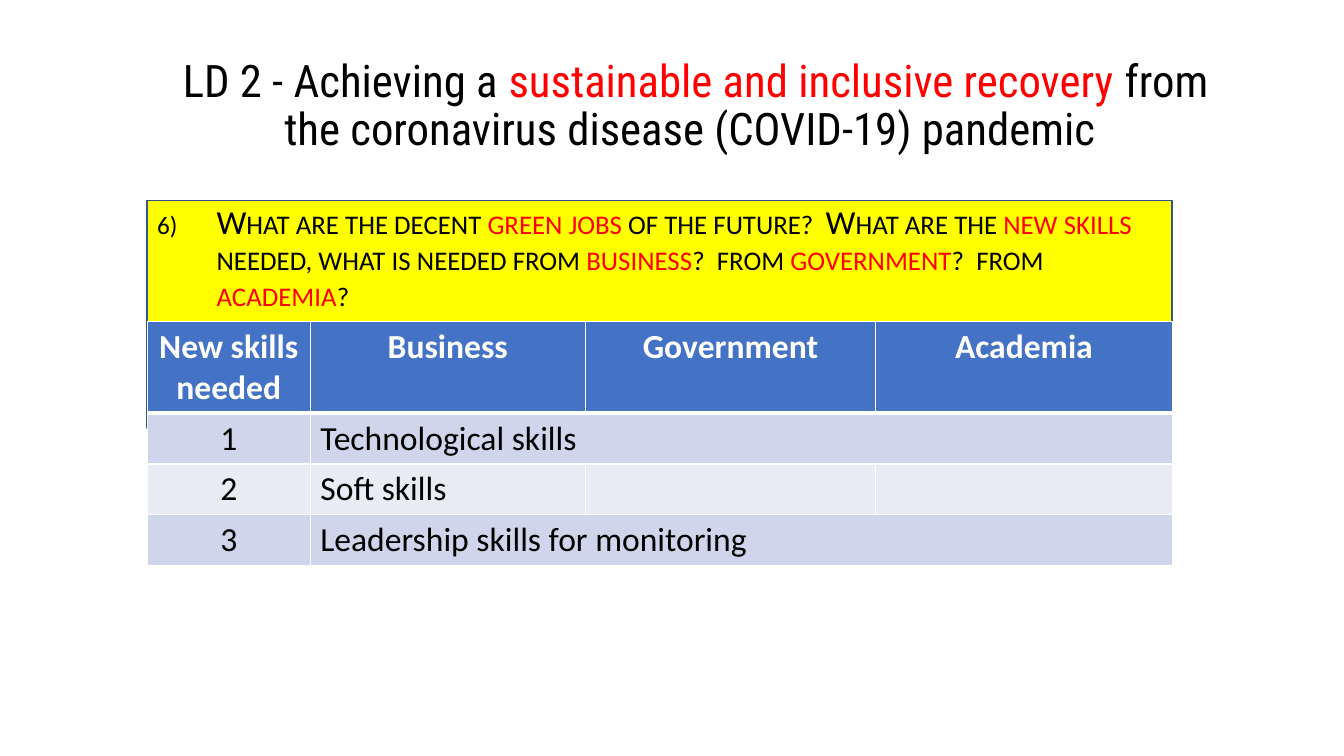
"""Build the slide on new skills for a sustainable and inclusive recovery."""
import pptx
import pptx.util
import pptx.dml.color
import pptx.enum.shapes
import pptx.enum.text
import pptx.oxml
import pptx.oxml.ns
from lxml import etree

COLORS = {
    "text": "000000", "accent": "FF0000", "white": "FFFFFF",
    "banner": "FFFF00", "outline": "325491",
    "header": "4472C4", "odd": "CFD5EA", "even": "E9EBF5",
}
TITLE = [
    ("LD 2 - Achieving a ", "text"),
    ("sustainable and inclusive recovery ", "accent"),
    ("from the coronavirus disease (COVID-19) pandemic ", "text"),
]
QUESTION = [
    ("What are the decent ", "text"), ("green jobs ", "accent"),
    ("of the future?  What are the ", "text"), ("new skills ", "accent"),
    ("needed, what is needed from ", "text"), ("business", "accent"),
    ("?  from ", "text"), ("government", "accent"),
    ("?  from ", "text"), ("academia", "accent"), ("?", "text"),
]
SKILLS = [
    ("New skills needed", "Business", "Government", "Academia"),
    ("1", "Technological skills", "", ""),
    ("2", "Soft skills", "", ""),
    ("3", "Leadership skills for monitoring", "", ""),
]
MERGED_ROWS = (1, 3)
COL_WIDTHS = (4.11, 6.93, 7.32, 7.47)
ROW_HEIGHTS = (2.31, 1.28, 1.28, 1.28)
LEFT, WIDTH = 3.71, sum(COL_WIDTHS)
QUESTION_TOP, TABLE_TOP = 5.05, 8.1

Cm, Pt = pptx.util.Cm, pptx.util.Pt
ALIGN = pptx.enum.text.PP_ALIGN


def rgb(name):
    return pptx.dml.color.RGBColor.from_string(COLORS[name])


def add_run(p, text, color, size=24, font="Calibri", bold=False):
    r = p.add_run()
    r.text = text
    r.font.size, r.font.name, r.font.bold = Pt(size), font, bold
    r.font.color.rgb = rgb(color)
    return r


def add_text_box(s, left, top, width, height):
    tf = s.shapes.add_textbox(Cm(left), Cm(top), Cm(width), Cm(height)).text_frame
    tf.word_wrap = True
    p = tf.paragraphs[0]
    p.line_spacing = 0.9
    return tf, p


def add_question(s):
    sp = s.shapes.add_shape(pptx.enum.shapes.MSO_SHAPE.RECTANGLE, Cm(LEFT),
                            Cm(QUESTION_TOP), Cm(WIDTH), Cm(5.74))
    sp.shadow.inherit = False
    sp.fill.solid()
    sp.fill.fore_color.rgb = rgb("banner")
    sp.line.color.rgb = rgb("outline")
    sp.line.width = Pt(1)

    tf, p = add_text_box(s, LEFT, QUESTION_TOP, WIDTH, 13.54)
    p.space_before = Pt(10)
    pPr = p._p.get_or_add_pPr()
    pPr.set("marL", str(Cm(1.5)))
    pPr.set("indent", str(-Cm(1.5)))
    qn = pptx.oxml.ns.qn
    etree.SubElement(pPr, qn("a:buSzPct"), val="75000")
    etree.SubElement(pPr, qn("a:buAutoNum"), type="arabicParenR", startAt="6")
    for text, color in QUESTION:
        r = add_run(p, text, color)
        r.font._element.set("cap", "small")


def add_title(s):
    tf, p = add_text_box(s, 3.94, 0.86, 27.18, 3.68)
    tf.vertical_anchor = pptx.enum.text.MSO_ANCHOR.MIDDLE
    p.alignment = ALIGN.CENTER
    for text, color in TITLE:
        add_run(p, text, color, 32, "Roboto Condensed")


def set_borders(cell, bottom, top):
    tcPr = cell._tc.get_or_add_tcPr()
    for side, width in (("L", 1), ("R", 1), ("T", top), ("B", bottom)):
        tcPr.append(pptx.oxml.parse_xml(
            f'<a:ln{side} {pptx.oxml.ns.nsdecls("a")} w="{Pt(width)}"><a:solidFill>'
            f'<a:srgbClr val="{COLORS["white"]}"/></a:solidFill></a:ln{side}>'))


def add_skills_table(s):
    table = s.shapes.add_table(len(SKILLS), len(COL_WIDTHS), Cm(LEFT), Cm(TABLE_TOP),
                               Cm(WIDTH), Cm(sum(ROW_HEIGHTS))).table
    for column, width in zip(table.columns, COL_WIDTHS):
        column.width = Cm(width)
    for i, (row, height) in enumerate(zip(SKILLS, ROW_HEIGHTS)):
        table.rows[i].height = Cm(height)
        is_header = i == 0
        fill = "header" if is_header else "odd" if i % 2 else "even"
        for j, text in enumerate(row):
            cell = table.cell(i, j)
            set_borders(cell, 3 if is_header else 1, 3 if i == 1 else 1)
            cell.fill.solid()
            cell.fill.fore_color.rgb = rgb(fill)
            if text:
                p = cell.text_frame.paragraphs[0]
                p.alignment = ALIGN.CENTER if is_header or j == 0 else ALIGN.LEFT
                add_run(p, text, "white" if is_header else "text", bold=is_header)
    for i in MERGED_ROWS:
        table.cell(i, 1).merge(table.cell(i, len(COL_WIDTHS) - 1))


def main():
    prs = pptx.Presentation()
    prs.slide_width, prs.slide_height = Cm(33.87), Cm(19.05)
    s = prs.slides.add_slide(prs.slide_layouts[6])
    add_question(s)
    add_title(s)
    add_skills_table(s)
    prs.save("out.pptx")


if __name__ == "__main__":
    main()
